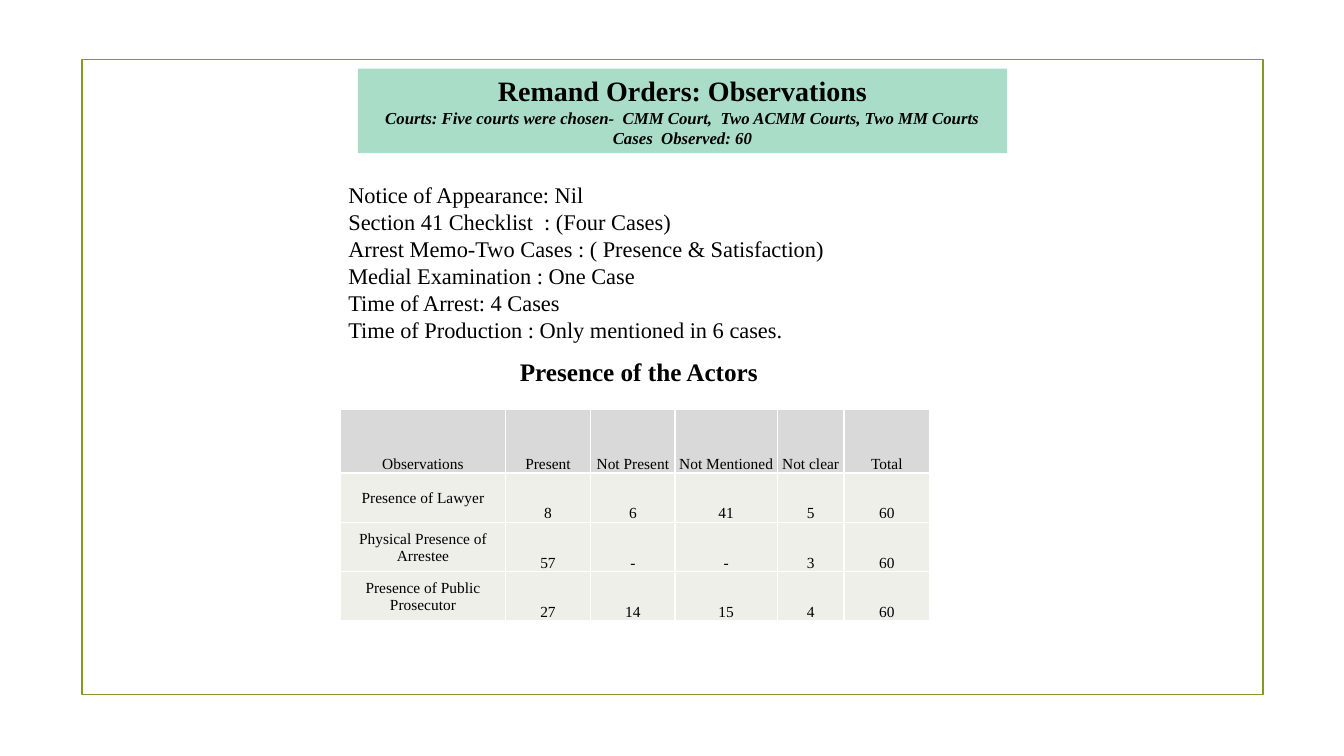
import pptx
import pptx.util
import pptx.dml.color
import pptx.enum.shapes
import pptx.enum.text
import pptx.oxml
import pptx.oxml.ns

Cm, Pt = pptx.util.Cm, pptx.util.Pt
RGBColor = pptx.dml.color.RGBColor
Anchor = pptx.enum.text.MSO_ANCHOR
CENTER = pptx.enum.text.PP_ALIGN.CENTER

# Content
HEADING = "Remand Orders: Observations"
SUBHEADING = [
    "Courts: Five courts were chosen-  CMM Court,  Two ACMM Courts, Two MM Courts",
    "Cases  Observed: 60",
]
FINDINGS = [
    "Notice of Appearance: Nil",
    "Section 41 Checklist  : (Four Cases)",
    "Arrest Memo-Two Cases : ( Presence & Satisfaction)",
    "Medial Examination : One Case",
    "Time of Arrest: 4 Cases",
    "Time of Production : Only mentioned in 6 cases.",
]
TABLE_HEADING = "Presence of the Actors"
ACTORS = [
    ("Observations", "Present", "Not Present", "Not Mentioned", "Not clear", "Total"),
    ("Presence of Lawyer", "8", "6", "41", "5", "60"),
    ("Physical Presence of Arrestee", "57", "-", "-", "3", "60"),
    ("Presence of Public Prosecutor", "27", "14", "15", "4", "60"),
]
COLUMN_WIDTHS = [4.14, 2.16, 2.12, 2.58, 1.68, 2.16]
HEADER_HEIGHT, ROW_HEIGHT = 1.6, 1.24

# Style
FONT = "Times New Roman"
BLACK = RGBColor(0x00, 0x00, 0x00)
OLIVE = RGBColor(0x83, 0x99, 0x2A)
MINT = RGBColor(0xA9, 0xDD, 0xC7)
GRAY = RGBColor(0xD9, 0xD9, 0xD9)
PALE = RGBColor(0xED, 0xEF, 0xE8)
WHITE = RGBColor(0xFF, 0xFF, 0xFF)


def format_spans(paragraph, size, bold=False):
    for span in paragraph.runs:
        span.font.name = FONT
        span.font.size = Pt(size)
        span.font.bold = bold
        span.font.color.rgb = BLACK


def add_text(page, lines, size, left, top, width, height, bold=False):
    box = page.shapes.add_textbox(Cm(left), Cm(top), Cm(width), Cm(height))
    frame = box.text_frame
    frame.word_wrap = True
    frame.auto_size = pptx.enum.text.MSO_AUTO_SIZE.SHAPE_TO_FIT_TEXT
    frame.text = "\n".join(lines)
    for paragraph in frame.paragraphs:
        format_spans(paragraph, size, bold)


def add_borders(cell, color, width):
    properties = cell._tc.get_or_add_tcPr()
    for position, side in enumerate(("lnL", "lnR", "lnT", "lnB")):
        border = pptx.oxml.parse_xml(
            f'<a:{side} {pptx.oxml.ns.nsdecls("a")} w="{Pt(width)}">'
            f'<a:solidFill><a:srgbClr val="{color}"/></a:solidFill></a:{side}>'
        )
        properties.insert(position, border)


def add_page_frame(page):
    outline = page.shapes.add_shape(
        pptx.enum.shapes.MSO_SHAPE.RECTANGLE, Cm(2.06), Cm(1.5), Cm(29.77), Cm(16)
    )
    outline.shadow.inherit = False
    outline.fill.background()
    outline.line.color.rgb = OLIVE
    outline.line.width = Pt(1.25)


def format_title(title):
    title.left, title.top, title.width, title.height = Cm(9.02), Cm(1.73), Cm(16.36), Cm(2.13)
    title.fill.solid()
    title.fill.fore_color.rgb = MINT
    frame = title.text_frame
    frame.word_wrap = True
    frame.auto_size = pptx.enum.text.MSO_AUTO_SIZE.SHAPE_TO_FIT_TEXT
    frame.vertical_anchor = Anchor.TOP
    frame.text = "\v".join([HEADING] + SUBHEADING)
    paragraph = frame.paragraphs[0]
    paragraph.alignment = CENTER
    format_spans(paragraph, 12, bold=True)
    for span in paragraph.runs[1:]:
        span.font.italic = True
    paragraph.runs[0].font.size = Pt(20)


def add_actor_table(page):
    heights = [HEADER_HEIGHT] + [ROW_HEIGHT] * (len(ACTORS) - 1)
    table = page.shapes.add_table(
        len(ACTORS), len(COLUMN_WIDTHS), Cm(8.59), Cm(10.32),
        Cm(sum(COLUMN_WIDTHS)), Cm(sum(heights)),
    ).table
    for column, width in zip(table.columns, COLUMN_WIDTHS):
        column.width = Cm(width)
    for row, height in zip(table.rows, heights):
        row.height = Cm(height)
    for row_index, values in enumerate(ACTORS):
        for column_index, value in enumerate(values):
            cell = table.cell(row_index, column_index)
            is_row_label = row_index > 0 and column_index == 0
            cell.text_frame.text = value
            cell.margin_left = cell.margin_right = cell.margin_top = Cm(0.03)
            cell.margin_bottom = 0
            cell.vertical_anchor = Anchor.MIDDLE if is_row_label else Anchor.BOTTOM
            cell.fill.solid()
            cell.fill.fore_color.rgb = PALE if row_index else GRAY
            add_borders(cell, WHITE, 1)
            paragraph = cell.text_frame.paragraphs[0]
            paragraph.alignment = CENTER
            format_spans(paragraph, 11)


def main():
    deck = pptx.Presentation()
    deck.slide_width, deck.slide_height = Cm(33.87), Cm(19.05)
    page = deck.slides.add_slide(deck.slide_layouts[5])

    add_page_frame(page)
    add_actor_table(page)
    format_title(page.shapes.title)
    add_text(page, [TABLE_HEADING], 18, 12.85, 8.86, 10.8, 1.02, bold=True)
    add_text(page, FINDINGS, 16, 8.53, 4.45, 17.32, 4.37)

    deck.save("out.pptx")


if __name__ == "__main__":
    main()
